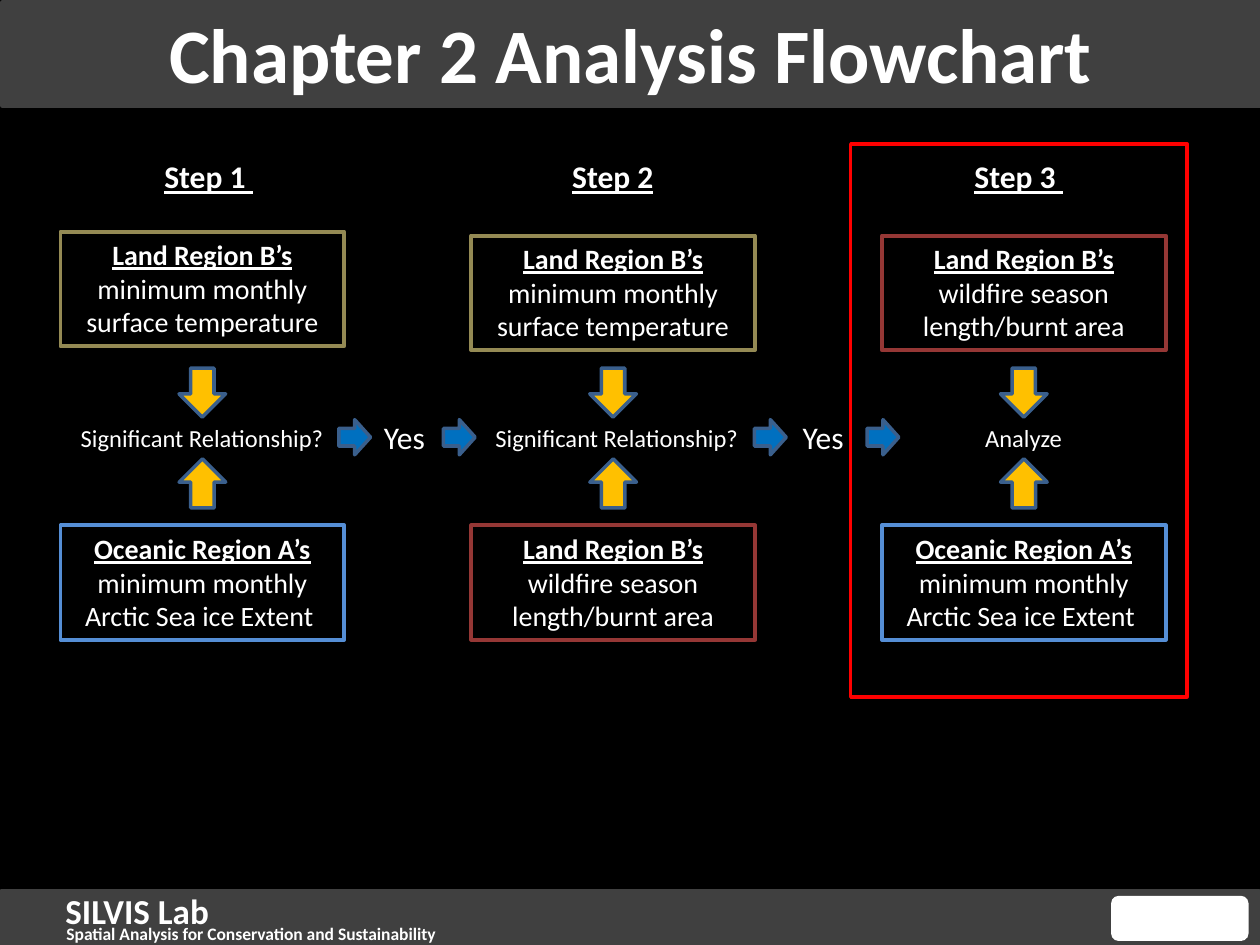
"""Build the Chapter 2 analysis flowchart slide."""
from dataclasses import dataclass

from pptx import Presentation
from pptx import util as u
from pptx.dml.color import RGBColor
from pptx.enum import shapes, text


@dataclass(frozen=True)
class Theme:
    font: str = "Calibri"
    background: str = "000000"
    bar: str = "404040"
    ink: str = "FFFFFF"
    ocean: str = "558ED5"
    climate: str = "948A54"
    fire: str = "953735"
    highlight: str = "FF0000"
    inward: str = "FFC000"
    onward: str = "0070C0"
    arrow_edge: str = "3A5F8C"
    title: int = 44
    lab: int = 20
    step: int = 18
    box: int = 16
    question: int = 14
    tagline: int = 10


@dataclass(frozen=True)
class Area:
    left: float
    top: float
    width: float
    height: float

    def lengths(self) -> tuple:
        """Return the four lengths in the order that python-pptx takes them."""
        return tuple(u.Cm(n) for n in (self.left, self.top, self.width, self.height))


@dataclass(frozen=True)
class Variable:
    region: str
    measure: str
    color: str


@dataclass(frozen=True)
class Step:
    heading: str
    heading_left: float
    question: str
    question_left: float
    upper: Variable
    upper_top: float
    lower: Variable


THEME = Theme()
KIND = shapes.MSO_SHAPE
CENTER = text.PP_ALIGN.CENTER

ICE = Variable("Oceanic Region A’s", " minimum monthly Arctic Sea ice Extent ", THEME.ocean)
WARMTH = Variable("Land Region B’s", " minimum monthly surface temperature", THEME.climate)
WILDFIRE = Variable("Land Region B’s", " wildfire season length/burnt area", THEME.fire)

STEPS = (
    Step("Step 1 ", 1.45, "Significant Relationship?", 1.32, WARMTH, 4.67, ICE),
    Step("Step 2", 9.6, "Significant Relationship?", 9.68, WARMTH, 4.75, WILDFIRE),
    Step("Step 3 ", 17.78, "Analyze", 17.88, WILDFIRE, 4.75, ICE),
)
FIRST_LEFT, STEP_PITCH = 1.22, 8.28
LOWER_TOP = 10.59
YES_LEFTS = (7.49, 15.93)
ONWARD_LEFTS = (6.83, 8.94, 15.21, 17.48)


def style_run(run, size: int, bold: bool = False, underline: bool = False) -> None:
    """Give a run the slide font."""
    run.font.name = THEME.font
    run.font.size = u.Pt(size)
    run.font.bold = bold
    run.font.underline = underline
    run.font.color.rgb = RGBColor.from_string(THEME.ink)


def add_block(slide, kind, area: Area, fill: str | None = None,
              edge: str | None = None, weight: float = 2):
    """Add a flat preset shape."""
    block = slide.shapes.add_shape(kind, *area.lengths())
    block.shadow.inherit = False
    if fill:
        block.fill.solid()
        block.fill.fore_color.rgb = RGBColor.from_string(fill)
    else:
        block.fill.background()
    if edge:
        block.line.color.rgb = RGBColor.from_string(edge)
        block.line.width = u.Pt(weight)
    else:
        block.line.fill.background()
    return block


def add_label(slide, area: Area, wording: str, size: int, align=None,
              bold: bool = False, underline: bool = False) -> None:
    """Add a one-line text box."""
    frame = slide.shapes.add_textbox(*area.lengths()).text_frame
    frame.word_wrap = True
    frame.text = wording
    frame.paragraphs[0].alignment = align
    style_run(frame.paragraphs[0].runs[0], size, bold, underline)


def add_variable(slide, left: float, top: float, variable: Variable) -> None:
    """Add an outlined box with an underlined region and its measure."""
    box = add_block(slide, KIND.RECTANGLE, Area(left, top, 5.72, 2.31),
                    edge=variable.color, weight=2.25)
    frame = box.text_frame
    frame.word_wrap = True
    frame.vertical_anchor = text.MSO_ANCHOR.TOP
    frame.text = variable.region
    paragraph = frame.paragraphs[0]
    paragraph.alignment = CENTER
    style_run(paragraph.runs[0], THEME.box, bold=True, underline=True)
    measure = paragraph.add_run()
    measure.text = variable.measure
    style_run(measure, THEME.box)


def add_step(slide, left: float, step: Step) -> None:
    """Add one column of the flowchart."""
    add_label(slide, Area(step.heading_left, 3.05, 5.51, 1.02), step.heading,
              THEME.step, CENTER, bold=True, underline=True)
    add_variable(slide, left, step.upper_top, step.upper)
    add_label(slide, Area(step.question_left, 8.41, 5.51, 0.86), step.question,
              THEME.question, CENTER)
    for top, rotation in ((7.42, 0), (9.25, 180)):
        arrow = add_block(slide, KIND.DOWN_ARROW, Area(left + 2.39, top, 0.94, 0.99),
                          THEME.inward, THEME.arrow_edge)
        arrow.rotation = rotation
    add_variable(slide, left, LOWER_TOP, step.lower)


def add_frame(slide) -> None:
    """Add the title and footer bands with their wording."""
    for area in (Area(0.05, 0.05, 25.35, 2.08), Area(0.03, 17.98, 25.35, 1.04)):
        add_block(slide, KIND.RECTANGLE, area, THEME.bar, THEME.bar, 3)
    add_label(slide, Area(1.07, 17.81, 6.17, 1.12), "SILVIS Lab", THEME.lab, bold=True)
    add_label(slide, Area(1.09, 18.49, 12.5, 0.43),
              "Spatial Analysis for Conservation and Sustainability",
              THEME.tagline, bold=True)
    add_block(slide, KIND.ROUNDED_RECTANGLE, Area(22.4, 18.06, 2.77, 0.91), THEME.ink)

    title = slide.shapes.title
    slide.shapes.element.append(title.element)
    title.left, title.top, title.width, title.height = Area(0.05, 0, 25.35, 2.11).lengths()
    title.text_frame.text = "Chapter 2 Analysis Flowchart"
    title.text_frame.vertical_anchor = text.MSO_ANCHOR.MIDDLE
    title.text_frame.paragraphs[0].alignment = CENTER
    style_run(title.text_frame.paragraphs[0].runs[0], THEME.title, bold=True)


def main() -> None:
    """Build and save the slide."""
    deck = Presentation()
    deck.slide_width, deck.slide_height = u.Cm(25.4), u.Cm(19.05)
    slide = deck.slides.add_slide(deck.slide_layouts.get_by_name("Title Only"))
    slide.background.fill.solid()
    slide.background.fill.fore_color.rgb = RGBColor.from_string(THEME.background)
    add_frame(slide)
    for column, step in enumerate(STEPS):
        add_step(slide, FIRST_LEFT + column * STEP_PITCH, step)
    for left in YES_LEFTS:
        add_label(slide, Area(left, 8.31, 1.47, 1.02), "Yes", THEME.step)
    for left in ONWARD_LEFTS:
        add_block(slide, KIND.RIGHT_ARROW, Area(left, 8.46, 0.64, 0.71),
                  THEME.onward, THEME.arrow_edge)
    add_block(slide, KIND.RECTANGLE, Area(17.15, 2.9, 6.78, 11.15), edge=THEME.highlight)
    deck.save("out.pptx")


if __name__ == "__main__":
    main()
